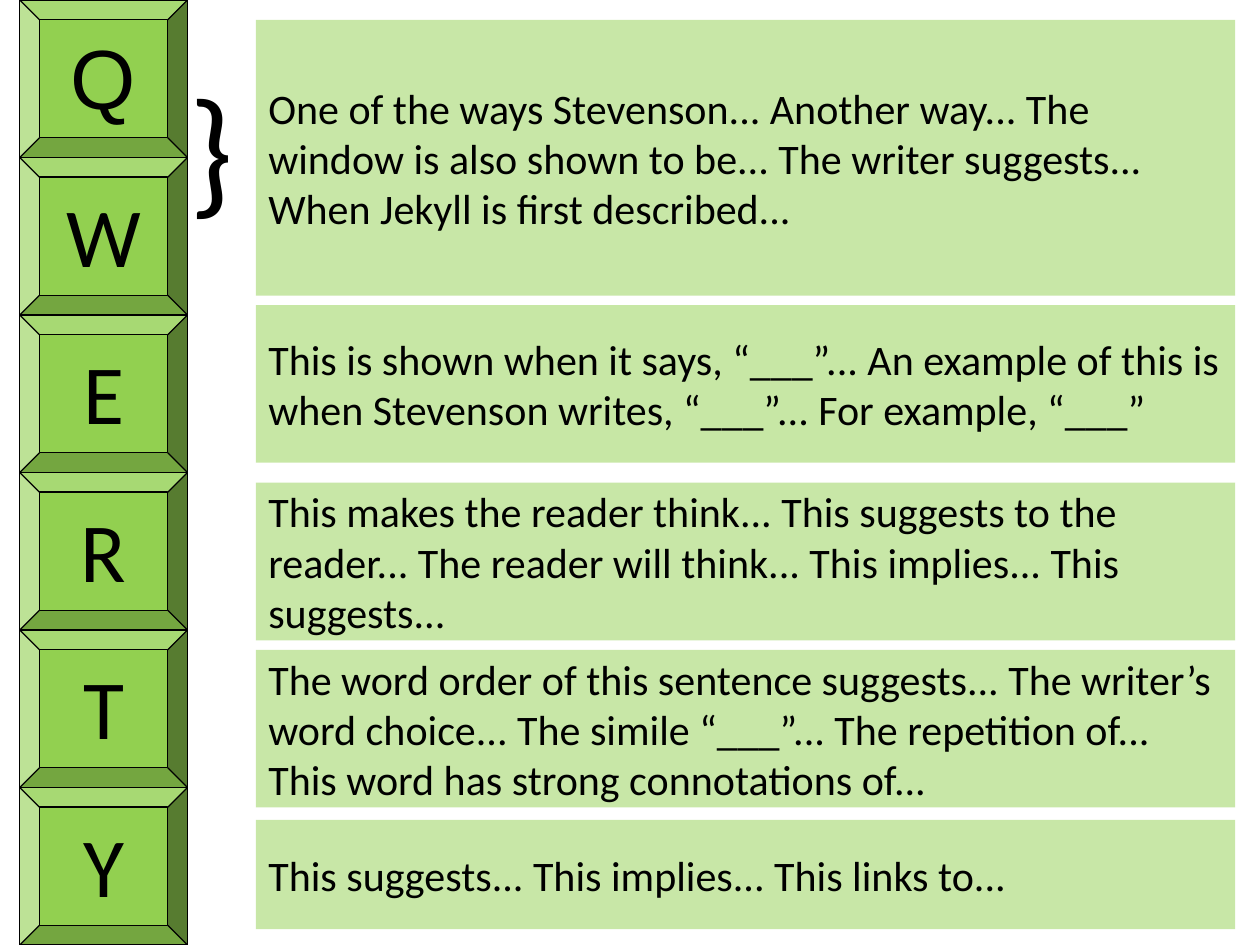
from lxml.etree import SubElement
from pptx import Presentation
from pptx.dml.color import RGBColor
from pptx.enum.shapes import MSO_SHAPE as SHAPE
from pptx.enum.text import MSO_ANCHOR as ANCHOR, PP_ALIGN as ALIGN
from pptx.oxml.ns import qn
from pptx.util import Cm, Pt

COLORS = {"green": "92D050", "black": "000000"}


def add_run(sp, text, size, align, anchor, font="Calibri"):
    tf = sp.text_frame
    tf.word_wrap = True
    tf.vertical_anchor = anchor
    p = tf.paragraphs[0]
    p.alignment = align
    r = p.add_run()
    r.text = text
    r.font.size = Pt(size)
    r.font.name = font
    r.font.color.rgb = RGBColor.from_string(COLORS["black"])


def add_green(s, kind, left, top, width, height):
    sp = s.shapes.add_shape(kind, Cm(left), Cm(top), Cm(width), Cm(height))
    sp.shadow.inherit = False
    sp.fill.solid()
    sp.fill.fore_color.rgb = RGBColor.from_string(COLORS["green"])
    return sp


prs = Presentation()
prs.slide_width, prs.slide_height = Cm(25.4), Cm(19.05)
s = prs.slides.add_slide(prs.slide_layouts[6])

# Column of letter keys, filling the slide height
letters = "QWERTY"
key_h = 19.05 / len(letters)
for i, letter in enumerate(letters):
    sp = add_green(s, SHAPE.BEVEL, 0.4, i * key_h, 3.38, key_h)
    sp.line.color.rgb = RGBColor.from_string(COLORS["black"])
    sp.line.width = Pt(0.75)
    font = "Arial" if letter == "Q" else "Calibri"
    add_run(sp, letter, 48, ALIGN.CENTER, ANCHOR.TOP, font)

# Brace joining the first two keys
sp = s.shapes.add_textbox(Cm(3.58), Cm(1.09), Cm(1.4), Cm(3.68))
add_run(sp, "}", 80, ALIGN.LEFT, ANCHOR.TOP)

# Half-transparent sentence starters: top, height, opacity in percent, text
starters = [
    (0.4, 5.56, 50, "One of the ways Stevenson... Another way... The window is also "
     "shown to be... The writer suggests... When Jekyll is first described..."),
    (6.15, 3.18, 51, "This is shown when it says, “___”... An example of this is when "
     "Stevenson writes, “___”... For example, “___”"),
    (9.73, 3.18, 50, "This makes the reader think... This suggests to the reader... "
     "The reader will think... This implies... This suggests..."),
    (13.1, 3.18, 50, "The word order of this sentence suggests... The writer’s word "
     "choice... The simile “___”... The repetition of... "
     "This word has strong connotations of..."),
    (16.53, 2.2, 50, "This suggests... This implies... This links to..."),
]
for top, height, opacity, text in starters:
    sp = add_green(s, SHAPE.RECTANGLE, 5.16, top, 19.74, height)
    sp.line.fill.background()
    color = sp.fill._xPr.find(qn("a:solidFill"))[0]
    SubElement(color, qn("a:alpha"), val=str(opacity * 1000))
    add_run(sp, text, 24, ALIGN.LEFT, ANCHOR.MIDDLE)

prs.save("out.pptx")
